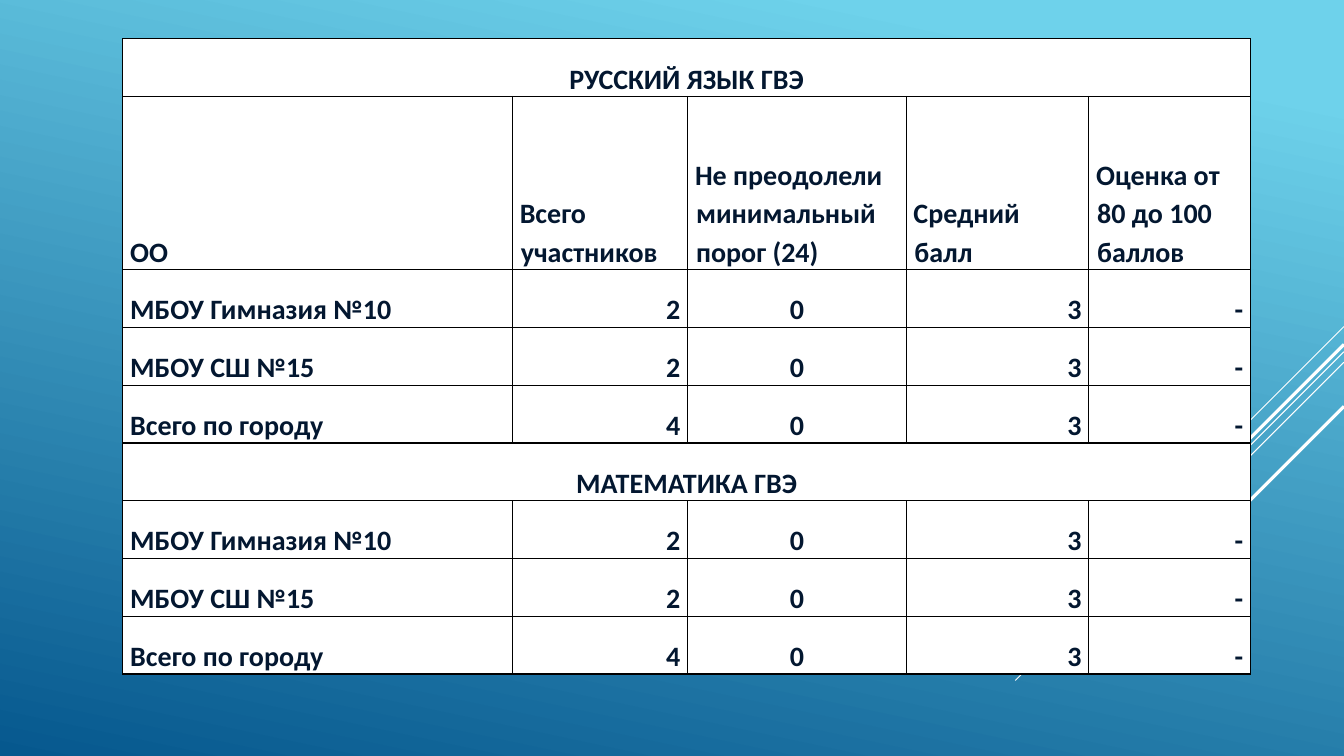
from lxml.etree import SubElement
from pptx import Presentation
from pptx.dml.color import RGBColor
from pptx.enum.shapes import MSO_CONNECTOR
from pptx.enum.text import MSO_ANCHOR, PP_ALIGN
from pptx.oxml import parse_xml
from pptx.oxml.ns import nsdecls, qn
from pptx.util import Pt

PX = 9525
WHITE = RGBColor(0xFF, 0xFF, 0xFF)
NAVY = RGBColor(0x03, 0x17, 0x30)
SKY = RGBColor(0x6E, 0xD2, 0xEB)
DEEP = RGBColor(0x06, 0x58, 0x8E)
WIDTH, HEIGHT = 1280, 720

deck = Presentation()
deck.slide_width, deck.slide_height = WIDTH * PX, HEIGHT * PX
slide = deck.slides.add_slide(deck.slide_layouts[6])

back = slide.background.fill
back.gradient()
back.gradient_angle = 258
for stop, color, place in zip(back.gradient_stops, (SKY, DEEP), (0.1, 1)):
    stop.color.rgb = color
    stop.position = place

# Diagonal rays: start height at the right edge, run, weight
rays = [(311, 96, 0.75), (335, 313, 0.75), (345, 199, 0.75),
        (328, 184, 2.25), (387, 134, 2.25)]
for top, run, weight in rays:
    ray = slide.shapes.add_connector(
        MSO_CONNECTOR.STRAIGHT, WIDTH * PX, top * PX,
        (WIDTH - run) * PX, (top + run) * PX)
    ray.line.color.rgb = WHITE
    ray.line.width = Pt(weight)
    SubElement(ray._element.spPr, qn("a:effectLst"))

heads = ["ОО", "Всего участников", "Не преодолели минимальный порог (24)",
         "Средний балл", "Оценка от 80 до 100 баллов"]
scores = [["МБОУ Гимназия №10", "2", "0", "3", "-"],
          ["МБОУ СШ №15", "2", "0", "3", "-"],
          ["Всего по городу", "4", "0", "3", "-"]]
rows = [["РУССКИЙ ЯЗЫК ГВЭ"], heads, *scores, ["МАТЕМАТИКА ГВЭ"], *scores]
widths = [371, 167, 208, 174, 154]
heights = [165 if row is heads else 55 for row in rows]
aligns = [PP_ALIGN.LEFT, PP_ALIGN.RIGHT, PP_ALIGN.CENTER,
          PP_ALIGN.RIGHT, PP_ALIGN.RIGHT]

table = slide.shapes.add_table(
    len(rows), len(widths), 117 * PX, 37 * PX,
    sum(widths) * PX, sum(heights) * PX).table
for column, width in zip(table.columns, widths):
    column.width = width * PX
for line, height in zip(table.rows, heights):
    line.height = height * PX

for r, row in enumerate(rows):
    title = len(row) == 1
    if title:
        table.cell(r, 0).merge(table.cell(r, len(widths) - 1))
    for c in range(len(widths)):
        cell = table.cell(r, c)
        cell.fill.solid()
        cell.fill.fore_color.rgb = WHITE
        cell.vertical_anchor = MSO_ANCHOR.BOTTOM
        cell.margin_left = cell.margin_right = 7 * PX
        cell.margin_top = cell.margin_bottom = 0
        props = cell._tc.get_or_add_tcPr()
        for i, side in enumerate(("lnL", "lnR", "lnT", "lnB")):
            props.insert(i, parse_xml(
                f'<a:{side} {nsdecls("a")} w="{Pt(1)}"><a:solidFill>'
                f'<a:srgbClr val="000000"/></a:solidFill></a:{side}>'))
        if c >= len(row):
            continue
        cell.text = row[c]
        para = cell.text_frame.paragraphs[0]
        if title:
            para.alignment = PP_ALIGN.CENTER
        else:
            para.alignment = PP_ALIGN.LEFT if row is heads else aligns[c]
        para.line_spacing = 1.12
        indent = para._p.get_or_add_pPr()
        indent.set("marL", str(PX))
        indent.set("indent", str(-PX))
        para.font.name = "Calibri"
        para.font.size = Pt(20)
        para.font.bold = True
        para.font.color.rgb = NAVY

deck.save("out.pptx")
